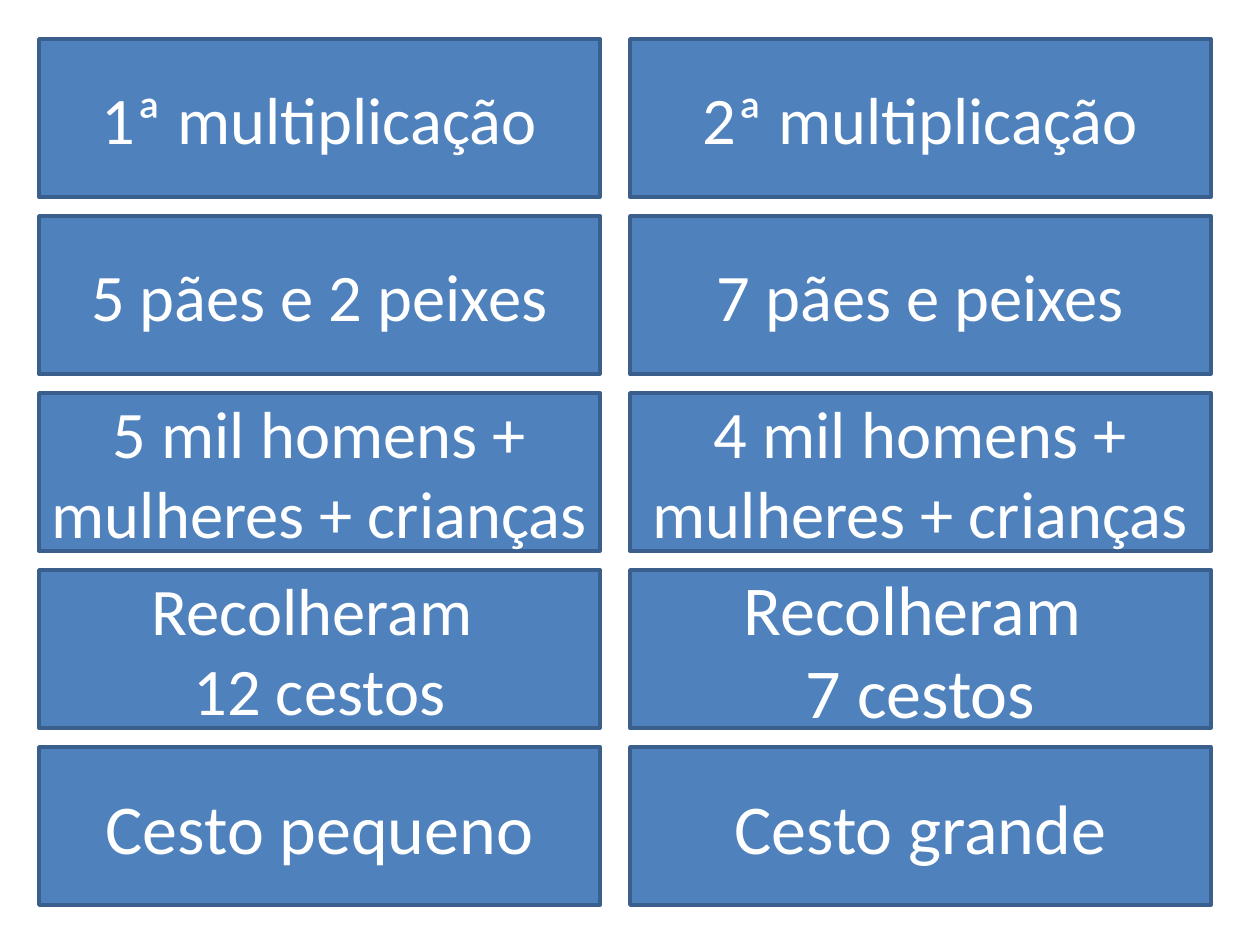
import pptx
import pptx.dml.color
import pptx.enum.shapes
import pptx.enum.text
import pptx.util

RGBColor = pptx.dml.color.RGBColor
FILL = RGBColor(0x4F, 0x81, 0xBD)
BORDER = RGBColor(0x3A, 0x5F, 0x8C)
WHITE = RGBColor(0xFF, 0xFF, 0xFF)

COLUMNS = [
    {"left": 39, "width": 561, "cells": [
        ("1ª multiplicação", 38),
        ("5 pães e 2 peixes", 38),
        ("5 mil homens +\nmulheres + crianças", 38),
        ("Recolheram \n12 cestos", 38),
        ("Cesto pequeno", 40),
    ]},
    {"left": 630, "width": 581, "cells": [
        ("2ª multiplicação", 38),
        ("7 pães e peixes", 38),
        ("4 mil homens +\nmulheres + crianças", 38),
        ("Recolheram \n7 cestos", 40),
        ("Cesto grande", 40),
    ]},
]
TOP, HEIGHT, GAP = 39, 158, 19


def px(n):
    return pptx.util.Emu(round(n * 914400 / 126))


def add_box(s, left, top, width, text, size):
    sp = s.shapes.add_shape(pptx.enum.shapes.MSO_SHAPE.RECTANGLE,
                            px(left), px(top), px(width), px(HEIGHT))
    sp.shadow.inherit = False
    sp.fill.solid()
    sp.fill.fore_color.rgb = FILL
    sp.line.color.rgb = BORDER
    sp.line.width = pptx.util.Pt(2)
    tf = sp.text_frame
    tf.word_wrap = True
    tf.vertical_anchor = pptx.enum.text.MSO_ANCHOR.MIDDLE
    tf.text = text
    for p in tf.paragraphs:
        p.alignment = pptx.enum.text.PP_ALIGN.CENTER
        for r in p.runs:
            r.font.name = "Calibri"
            r.font.size = pptx.util.Pt(size)
            r.font.color.rgb = WHITE


prs = pptx.Presentation()
prs.slide_width, prs.slide_height = px(1260), px(945)
s = prs.slides.add_slide(prs.slide_layouts[6])
for column in COLUMNS:
    for row, (text, size) in enumerate(column["cells"]):
        add_box(s, column["left"], TOP + row * (HEIGHT + GAP),
                column["width"], text, size)
prs.save("out.pptx")
